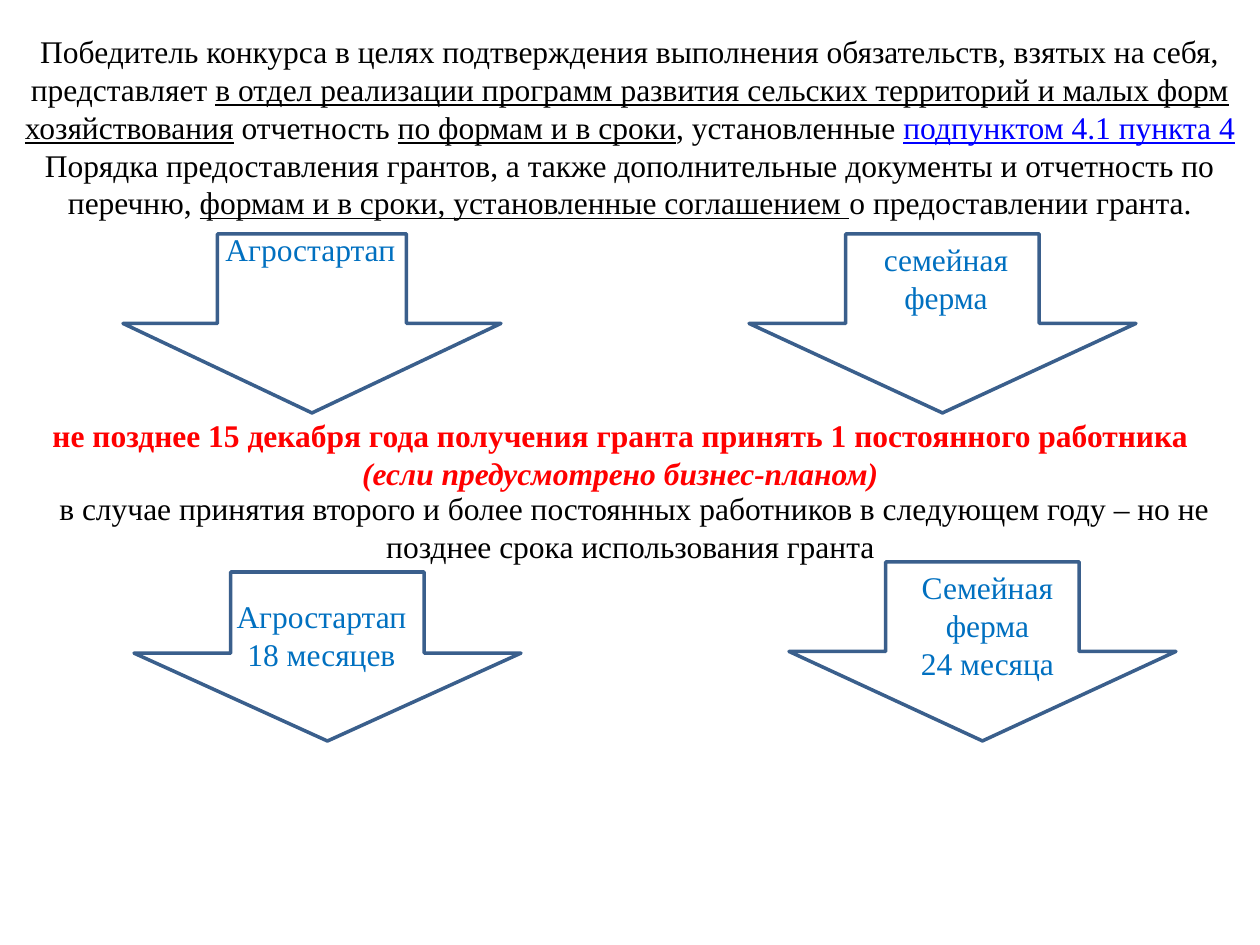
from dataclasses import dataclass

from pptx import Presentation
from pptx import util as u
from pptx.dml.color import RGBColor
from pptx.enum import shapes, text

PX_PER_INCH = 126
FONT = "Times New Roman"
COLORS = {
    "ink": "000000",
    "link": "0000FF",
    "label": "0070C0",
    "alert": "FF0000",
    "outline": "3A5F8C",
}


@dataclass(frozen=True)
class Area:
    left: int
    top: int
    width: int
    height: int

    def emu(self) -> list[int]:
        return [px(n) for n in (self.left, self.top, self.width, self.height)]


@dataclass(frozen=True)
class Span:
    words: str
    color: str = "ink"
    bold: bool = False
    italic: bool = False
    underline: bool = False


@dataclass(frozen=True)
class Arrow:
    area: Area
    label_area: Area
    lines: tuple[str, ...]
    wrap: bool = True
    centered: bool = True
    head: float = 0.5


ARROWS = [
    Arrow(Area(123, 234, 378, 179), Area(213, 224, 218, 50), ("Агростартап",), centered=False),
    Arrow(Area(749, 234, 387, 179), Area(868, 234, 156, 89), ("семейная", "ферма"), wrap=False),
    Arrow(Area(134, 572, 387, 169), Area(223, 591, 197, 89), ("Агростартап", "18 месяцев"), wrap=False, head=0.52),
    Arrow(Area(789, 562, 387, 179), Area(898, 562, 179, 127), ("Семейная", "ферма", "24 месяца")),
]

DUTY = [
    Span("Победитель конкурса в целях подтверждения выполнения обязательств, взятых на себя, представляет "),
    Span("в отдел реализации программ развития сельских территорий и малых форм хозяйствования", underline=True),
    Span(" отчетность "),
    Span("по формам и в сроки", underline=True),
    Span(", установленные "),
    Span("подпунктом 4.1 пункта 4", color="link", underline=True),
    Span(" Порядка предоставления грантов, а также дополнительные документы и отчетность по перечню, "),
    Span("формам и в сроки, установленные соглашением ", underline=True),
    Span("о предоставлении гранта."),
]
DEADLINE = [
    Span("не позднее 15 декабря года получения гранта принять 1 постоянного работника ", color="alert", bold=True),
    Span("(если предусмотрено бизнес-планом)", color="alert", bold=True, italic=True),
]
EXTRA_STAFF = [
    Span(
        "в случае принятия второго и более постоянных работников в следующем году – "
        "но не позднее срока использования гранта "
    ),
]


def px(count: int) -> int:
    return u.Inches(count / PX_PER_INCH)


def rgb(name: str) -> RGBColor:
    return RGBColor.from_string(COLORS[name])


def add_text(page, area: Area, paragraphs: list[list[Span]], *, wrap: bool = True,
             centered: bool = True, size: int = 18) -> None:
    frame = page.shapes.add_textbox(*area.emu()).text_frame
    frame.word_wrap = wrap
    frame.auto_size = text.MSO_AUTO_SIZE.SHAPE_TO_FIT_TEXT
    for index, spans in enumerate(paragraphs):
        para = frame.add_paragraph() if index else frame.paragraphs[0]
        para.alignment = text.PP_ALIGN.CENTER if centered else text.PP_ALIGN.LEFT
        for span in spans:
            run = para.add_run()
            run.text = span.words
            font = run.font
            font.name, font.size = FONT, u.Pt(size)
            font.bold, font.italic, font.underline = span.bold, span.italic, span.underline
            font.color.rgb = rgb(span.color)


def add_arrow(page, arrow: Arrow) -> None:
    shape = page.shapes.add_shape(shapes.MSO_SHAPE.DOWN_ARROW, *arrow.area.emu())
    shape.adjustments[1] = arrow.head
    shape.shadow.inherit = False
    shape.fill.background()
    shape.line.color.rgb = rgb("outline")
    shape.line.width = u.Pt(2)
    labels = [[Span(line, color="label")] for line in arrow.lines]
    add_text(page, arrow.label_area, labels, wrap=arrow.wrap, centered=arrow.centered)


def main() -> None:
    deck = Presentation()
    deck.slide_width, deck.slide_height = px(1260), px(945)
    page = deck.slides.add_slide(deck.slide_layouts[6])
    add_text(page, Area(0, 26, 1260, 204), [DUTY])
    for arrow in ARROWS[:2]:
        add_arrow(page, arrow)
    add_text(page, Area(15, 410, 1211, 89), [DEADLINE])
    add_text(page, Area(44, 483, 1181, 89), [EXTRA_STAFF])
    for arrow in ARROWS[2:]:
        add_arrow(page, arrow)
    deck.save("out.pptx")


if __name__ == "__main__":
    main()
